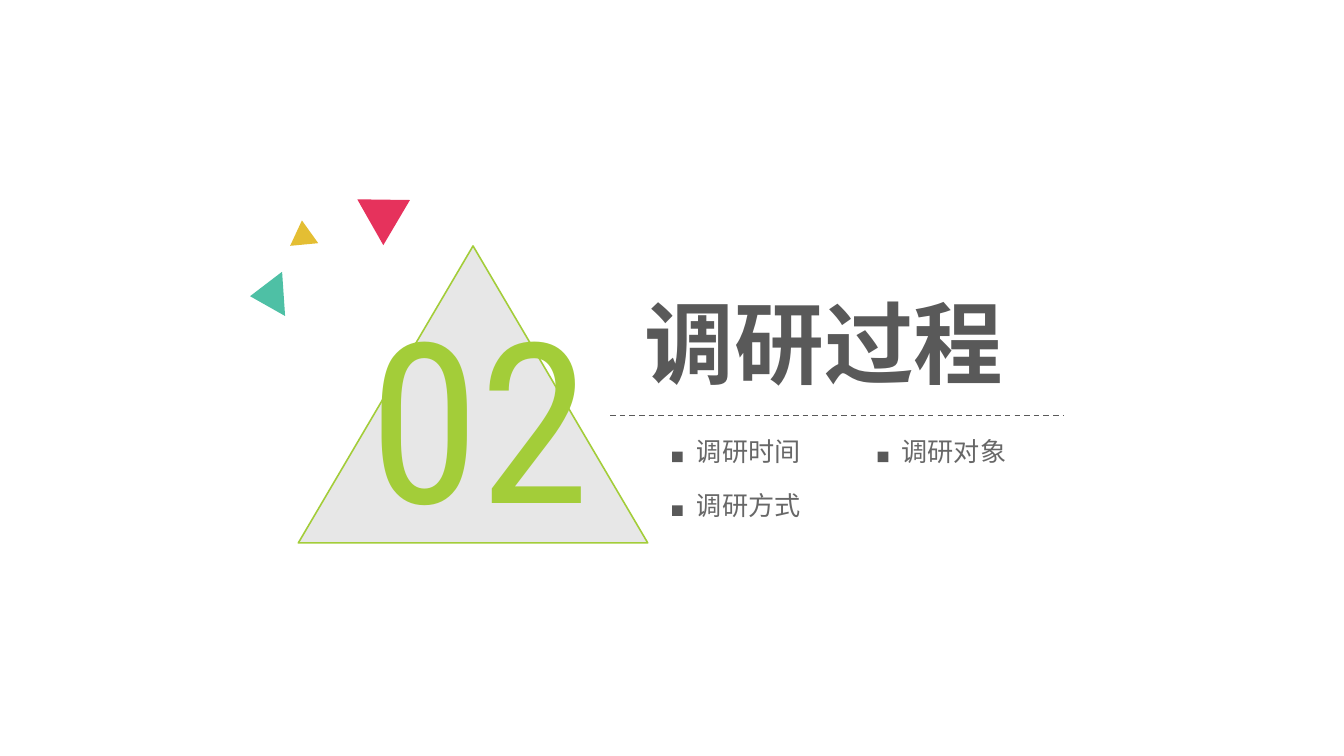
"""Build a section divider slide with a numbered triangle and three topics."""
from dataclasses import dataclass

from lxml.etree import SubElement
from pptx import Presentation
from pptx.dml.color import RGBColor
from pptx.enum.dml import MSO_LINE
from pptx.enum.shapes import MSO_CONNECTOR, MSO_SHAPE
from pptx.enum.text import MSO_AUTO_SIZE
from pptx.oxml.ns import qn
from pptx.util import Inches, Pt

COLORS = {
    "gray": "595959",
    "green": "A3CD39",
    "pink": "E6325C",
    "yellow": "E4BE33",
    "teal": "4EC0A5",
}
CJK = "Noto Sans CJK SC"
LATIN = "Roboto Condensed"
TOPICS = ["调研时间", "调研对象", "调研方式"]


@dataclass
class Box:
    x: float
    y: float
    w: float
    h: float


@dataclass
class Triangle:
    box: Box
    color: str
    rotation: float


@dataclass
class Style:
    size: float
    font: str
    color: str
    bold: bool = False
    opacity: int = 100


ACCENTS = [
    Triangle(Box(2.61, 1.4, 0.39, 0.34), "pink", 300.6),
    Triangle(Box(2.15, 1.64, 0.21, 0.18), "yellow", 354.7),
    Triangle(Box(1.82, 2.07, 0.33, 0.25), "teal", 266.1),
]


def rgb(name: str) -> RGBColor:
    return RGBColor.from_string(COLORS[name])


def set_opacity(parent, percent: int) -> None:
    clr = parent.find(qn("a:solidFill")).find(qn("a:srgbClr"))
    SubElement(clr, qn("a:alpha")).set("val", str(percent * 1000))


def add_shape(shapes, kind: MSO_SHAPE, box: Box, color: str, rotation: float = 0):
    sp = shapes.add_shape(kind, Inches(box.x), Inches(box.y), Inches(box.w), Inches(box.h))
    sp.shadow.inherit = False
    sp.fill.solid()
    sp.fill.fore_color.rgb = rgb(color)
    sp.line.fill.background()
    sp.rotation = rotation
    return sp


def add_text(shapes, box: Box, text: str, style: Style) -> None:
    sp = shapes.add_textbox(Inches(box.x), Inches(box.y), Inches(box.w), Inches(box.h))
    tf = sp.text_frame
    tf.word_wrap = False
    tf.auto_size = MSO_AUTO_SIZE.SHAPE_TO_FIT_TEXT
    r = tf.paragraphs[0].add_run()
    r.text = text
    r.font.size = Pt(style.size)
    r.font.bold = style.bold
    r.font.color.rgb = rgb(style.color)
    r.font.name = style.font
    rpr = r.font._element
    SubElement(rpr, qn("a:ea")).set("typeface", style.font)
    if style.opacity < 100:
        set_opacity(rpr, style.opacity)


def add_divider(shapes, x1: float, x2: float, y: float) -> None:
    line = shapes.add_connector(MSO_CONNECTOR.STRAIGHT, Inches(x1), Inches(y), Inches(x2), Inches(y))
    line.line.color.rgb = rgb("gray")
    line.line.width = Pt(0.75)
    line.line.dash_style = MSO_LINE.DASH
    SubElement(line._element.spPr, qn("a:effectLst"))


def add_topic(shapes, x: float, y: float, text: str) -> None:
    group = shapes.add_group_shape().shapes
    add_shape(group, MSO_SHAPE.RECTANGLE, Box(x, y + 0.17, 0.08, 0.08), "gray")
    add_text(group, Box(x + 0.08, y, 0.99, 0.34), text, Style(14, CJK, "gray", opacity=91))


def main() -> None:
    prs = Presentation()
    prs.slide_width = Inches(10)
    prs.slide_height = Inches(10) * 9 // 16
    s = prs.slides.add_slide(prs.slide_layouts[6])

    badge = add_shape(s.shapes, MSO_SHAPE.ISOSCELES_TRIANGLE, Box(2.22, 1.83, 2.6, 2.21), "gray")
    set_opacity(badge._element.spPr, 14)
    badge.line.color.rgb = rgb("green")
    badge.line.width = Pt(0.85)

    add_text(s.shapes, Box(2.65, 2.03, 1.95, 2.12), "02", Style(120, LATIN, "green"))
    add_text(s.shapes, Box(4.7, 2.09, 2.89, 0.91), "调研过程", Style(48, CJK, "gray", bold=True))
    add_divider(s.shapes, 4.54, 7.91, 3.09)

    for i, topic in enumerate(TOPICS):
        row, col = divmod(i, 2)
        add_topic(s.shapes, 5 + col * 1.53, 3.19 + row * 0.4, topic)

    for t in ACCENTS:
        add_shape(s.shapes, MSO_SHAPE.ISOSCELES_TRIANGLE, t.box, t.color, t.rotation)

    prs.save("out.pptx")


if __name__ == "__main__":
    main()
